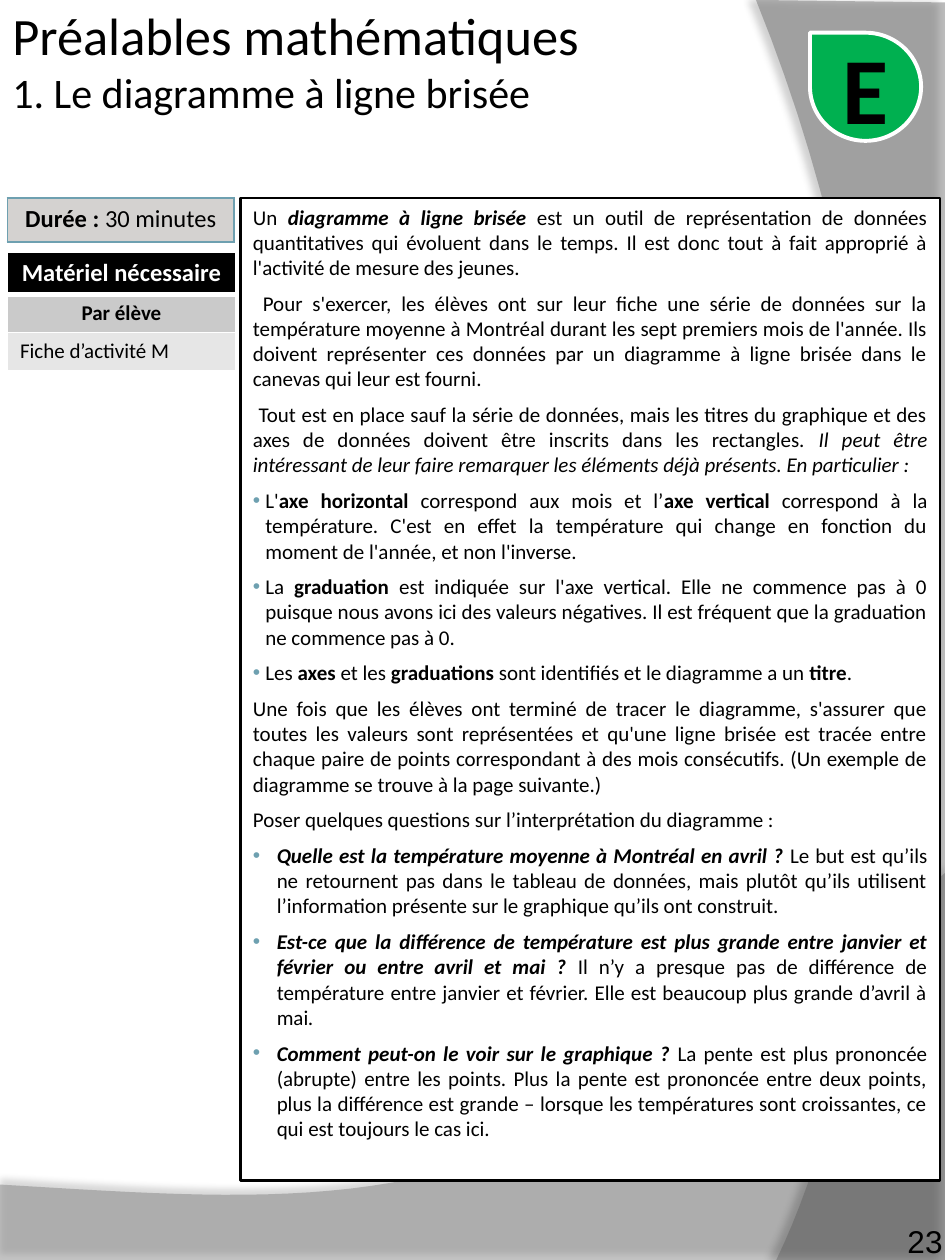
from lxml import etree
from pptx import Presentation
from pptx.dml.color import RGBColor
from pptx.enum.shapes import MSO_SHAPE
from pptx.enum.text import MSO_ANCHOR, PP_ALIGN
from pptx.oxml.ns import qn
from pptx.util import Cm, Pt

LEFT, CENTER, RIGHT, JUSTIFY = PP_ALIGN.LEFT, PP_ALIGN.CENTER, PP_ALIGN.RIGHT, PP_ALIGN.JUSTIFY
TOP, MIDDLE, BOTTOM = MSO_ANCHOR.TOP, MSO_ANCHOR.MIDDLE, MSO_ANCHOR.BOTTOM
RECTANGLE, TEARDROP = MSO_SHAPE.RECTANGLE, MSO_SHAPE.TEAR

COLORS = {
    "black": "000000", "white": "FFFFFF", "green": "00B050", "teal": "6EA0B0",
    "wave": "7B7B7B", "ribbon": "5A5A5A",
    "duration": "D4D2D0", "subheading": "CACACA", "item": "E6E6E6",
}
SHORT_INDENT, LONG_INDENT = 0.25, 0.48

# Each entry: bullet indent in cm, then runs; a styled run is (text, "b", "i" or "bi").
BODY = [
    (0, ["Un ", ("diagramme à ligne brisée ", "bi"),
         "est un outil de représentation de données quantitatives qui évoluent dans le temps. "
         "Il est donc tout à fait approprié à l'activité de mesure des jeunes."]),
    (0, [" Pour s'exercer, les élèves ont sur leur fiche une série de données sur la température "
         "moyenne à Montréal durant les sept premiers mois de l'année. Ils doivent représenter ces "
         "données par un diagramme à ligne brisée dans le canevas qui leur est fourni."]),
    (0, [" Tout est en place sauf la série de données, mais les titres du graphique et des axes de "
         "données doivent être inscrits dans les rectangles. ",
         ("Il peut être intéressant de leur faire remarquer les éléments déjà présents. "
          "En particulier :", "i")]),
    (SHORT_INDENT, ["L'", ("axe horizontal ", "b"), "correspond aux mois et l’",
                    ("axe vertical ", "b"),
                    "correspond à la température. C'est en effet la température qui change en "
                    "fonction du moment de l'année, et non l'inverse."]),
    (SHORT_INDENT, ["La ", ("graduation ", "b"),
                    "est indiquée sur l'axe vertical. Elle ne commence pas à 0 puisque nous avons "
                    "ici des valeurs négatives. Il est fréquent que la graduation ne commence pas "
                    "à 0."]),
    (SHORT_INDENT, ["Les ", ("axes ", "b"), "et les ", ("graduations ", "b"),
                    "sont identifiés et le diagramme a un ", ("titre", "b"), "."]),
    (0, ["Une fois que les élèves ont terminé de tracer le diagramme, s'assurer que toutes les "
         "valeurs sont représentées et qu'une ligne brisée est tracée entre chaque paire de points "
         "correspondant à des mois consécutifs. (Un exemple de diagramme se trouve à la page "
         "suivante.)"]),
    (0, ["Poser quelques questions sur l’interprétation du diagramme :"]),
    (LONG_INDENT, [("Quelle est la température moyenne à Montréal en avril ? ", "bi"),
                   "Le but est qu’ils ne retournent pas dans le tableau de données, mais plutôt "
                   "qu’ils utilisent l’information présente sur le graphique qu’ils ont construit."]),
    (LONG_INDENT, [("Est-ce que la différence de température est plus grande entre janvier et "
                    "février ou entre avril et mai ? ", "bi"),
                   "Il n’y a presque pas de différence de température entre janvier et février. "
                   "Elle est beaucoup plus grande d’avril à mai", (". ", "i")]),
    (LONG_INDENT, [("Comment peut-on le voir sur le graphique ? ", "bi"),
                   "La pente est plus prononcée (abrupte) entre les points. Plus la pente est "
                   "prononcée entre deux points, plus la différence est grande – lorsque les "
                   "températures sont croissantes, ce qui est toujours le cas ici."]),
]


def rgb(name):
    return RGBColor.from_string(COLORS[name])


def add_color(parent, name, alpha=100):
    color = etree.SubElement(parent, qn("a:srgbClr"), val=COLORS[name])
    if alpha < 100:
        etree.SubElement(color, qn("a:alpha"), val=str(alpha * 1000))


def curve_points(start, control_1, control_2, end, steps=40):
    """Return the points of a cubic Bézier curve, in cm."""
    def mix(axis, t):
        return ((1 - t) ** 3 * start[axis] + 3 * (1 - t) ** 2 * t * control_1[axis]
                + 3 * (1 - t) * t ** 2 * control_2[axis] + t ** 3 * end[axis])
    return [(mix(0, step / steps), mix(1, step / steps)) for step in range(steps + 1)]


def write_text(paragraph, runs, size=12, color="black", font="Calibri", align=LEFT,
               before=0, indent=0):
    """Fill a paragraph with runs; an indent also gives it a hanging bullet."""
    paragraph.alignment = align
    paragraph.space_before = Pt(before)
    for item in runs:
        text, style = (item, "") if isinstance(item, str) else item
        run = paragraph.add_run()
        run.text = text
        run.font.name, run.font.size = font, Pt(size)
        run.font.bold, run.font.italic = "b" in style, "i" in style
        run.font.color.rgb = rgb(color)
    if indent:
        properties = paragraph._p.get_or_add_pPr()
        properties.set("marL", str(Cm(indent)))
        properties.set("indent", str(-Cm(indent)))
        add_color(etree.SubElement(properties, qn("a:buClr")), "teal")
        etree.SubElement(properties, qn("a:buFont"), typeface="Arial")
        etree.SubElement(properties, qn("a:buChar"), char="•")


class SlideBuilder:
    def __init__(self, slide):
        self.slide = slide

    def background(self, points, fill, alpha, shadow_alpha, distance, direction):
        """Draw a translucent outline through points in cm, with a soft shadow."""
        builder = self.slide.shapes.build_freeform(*map(Cm, points[0]), scale=1.0)
        builder.add_line_segments([(Cm(x), Cm(y)) for x, y in points[1:]], close=True)
        shape = builder.convert_to_shape()
        shape.fill.solid()
        shape.fill.fore_color.rgb = rgb(fill)
        shape.line.fill.background()
        properties = shape._element.spPr
        color = properties.find(qn("a:solidFill"))[0]
        etree.SubElement(color, qn("a:alpha"), val=str(alpha * 1000))
        effects = etree.SubElement(properties, qn("a:effectLst"))
        shadow = etree.SubElement(effects, qn("a:outerShdw"), blurRad=str(Pt(4)),
                                  dist=str(Pt(distance)), dir=str(direction * 60000))
        add_color(shadow, "black", shadow_alpha)

    def shape(self, kind, box, fill, line_color, line_width, anchor=TOP):
        shape = self.slide.shapes.add_shape(kind, *map(Cm, box))
        shape.shadow.inherit = False
        shape.fill.solid()
        shape.fill.fore_color.rgb = rgb(fill)
        shape.line.color.rgb = rgb(line_color)
        shape.line.width = Pt(line_width)
        shape.text_frame.word_wrap = True
        shape.text_frame.vertical_anchor = anchor
        return shape

    def text_box(self, box, anchor, margin=None):
        frame = self.slide.shapes.add_textbox(*map(Cm, box)).text_frame
        frame.word_wrap = True
        frame.vertical_anchor = anchor
        if margin is not None:
            frame.margin_left = frame.margin_right = Cm(margin)
            frame.margin_top = frame.margin_bottom = Cm(margin)
        return frame

    def table(self, left, top, width, rows, border):
        """Add a one-column table; each row is (height, runs, fill, anchor, text format)."""
        height = sum(row[0] for row in rows)
        table = self.slide.shapes.add_table(len(rows), 1, Cm(left), Cm(top),
                                            Cm(width), Cm(height)).table
        for index, (row_height, runs, fill, anchor, text_format) in enumerate(rows):
            table.rows[index].height = Cm(row_height)
            cell = table.cell(index, 0)
            cell.vertical_anchor = anchor
            write_text(cell.text_frame.paragraphs[0], runs, **text_format)
            for side in ("lnL", "lnR", "lnT", "lnB"):
                heading_rule = fill == "black" and side == "lnB"
                line = etree.SubElement(cell._tc.get_or_add_tcPr(), qn(f"a:{side}"),
                                        w=str(Pt(3 if heading_rule else 1)))
                add_color(etree.SubElement(line, qn("a:solidFill")), border)
            cell.fill.solid()
            cell.fill.fore_color.rgb = rgb(fill)


def main():
    presentation = Presentation()
    presentation.slide_width, presentation.slide_height = Cm(19.05), Cm(25.4)
    slide = SlideBuilder(presentation.slides.add_slide(presentation.slide_layouts[6]))

    wave = curve_points((19.05, 17.6), (10.64, 24.69), (7.44, 24.33), (0, 23.88))
    slide.background([(0, 25.4), (19.05, 25.4)] + wave, "wave", 45, 35, 3.5, 270)
    ribbon = curve_points((15.65, 25.4), (17.81, 20.98), (19.38, 10.19), (15.24, 0))
    slide.background([(19.05, 0.05), (19.05, 25.4)] + ribbon, "ribbon", 40, 45, 4, 180)

    centered = {"align": CENTER}
    slide.table(0.15, 3.99, 4.57, [
        (0.89, [("Durée : ", "b"), "30 minutes"], "duration", TOP, {"size": 14, **centered}),
    ], "teal")

    title = slide.text_box((0, 0, 13.92, 2.41), MIDDLE)
    write_text(title.paragraphs[0], ["Préalables mathématiques"], size=30)
    write_text(title.add_paragraph(), ["1. Le diagramme à ligne brisée"], size=24)

    page_number = slide.text_box((15.62, 22.25, 3.38, 3.15), BOTTOM, margin=0)
    write_text(page_number.paragraphs[0], ["23"], size=18, font="Arial", align=RIGHT)

    body = slide.shape(RECTANGLE, (4.85, 3.99, 14.1, 19.81), "white", "black", 1.5).text_frame
    for index, (indent, runs) in enumerate(BODY):
        paragraph = body.add_paragraph() if index else body.paragraphs[0]
        write_text(paragraph, runs, align=JUSTIFY, before=6 if index else 0, indent=indent)

    slide.table(0.15, 5.08, 4.6, [
        (0.86, [("Matériel nécessaire", "b")], "black", MIDDLE,
         {"size": 14, "color": "white", **centered}),
        (0.76, [("Par élève", "b")], "subheading", TOP, centered),
        (0.74, ["Fiche d’activité M"], "item", TOP, {}),
    ], "white")

    badge = slide.shape(TEARDROP, (16.33, 0.66, 2.24, 2.18), "green", "white", 2.25, MIDDLE)
    badge._element.spPr.xfrm.set("flipH", "1")
    write_text(badge.text_frame.paragraphs[0], [("E", "b")], size=54, align=CENTER)

    presentation.save("out.pptx")


if __name__ == "__main__":
    main()
